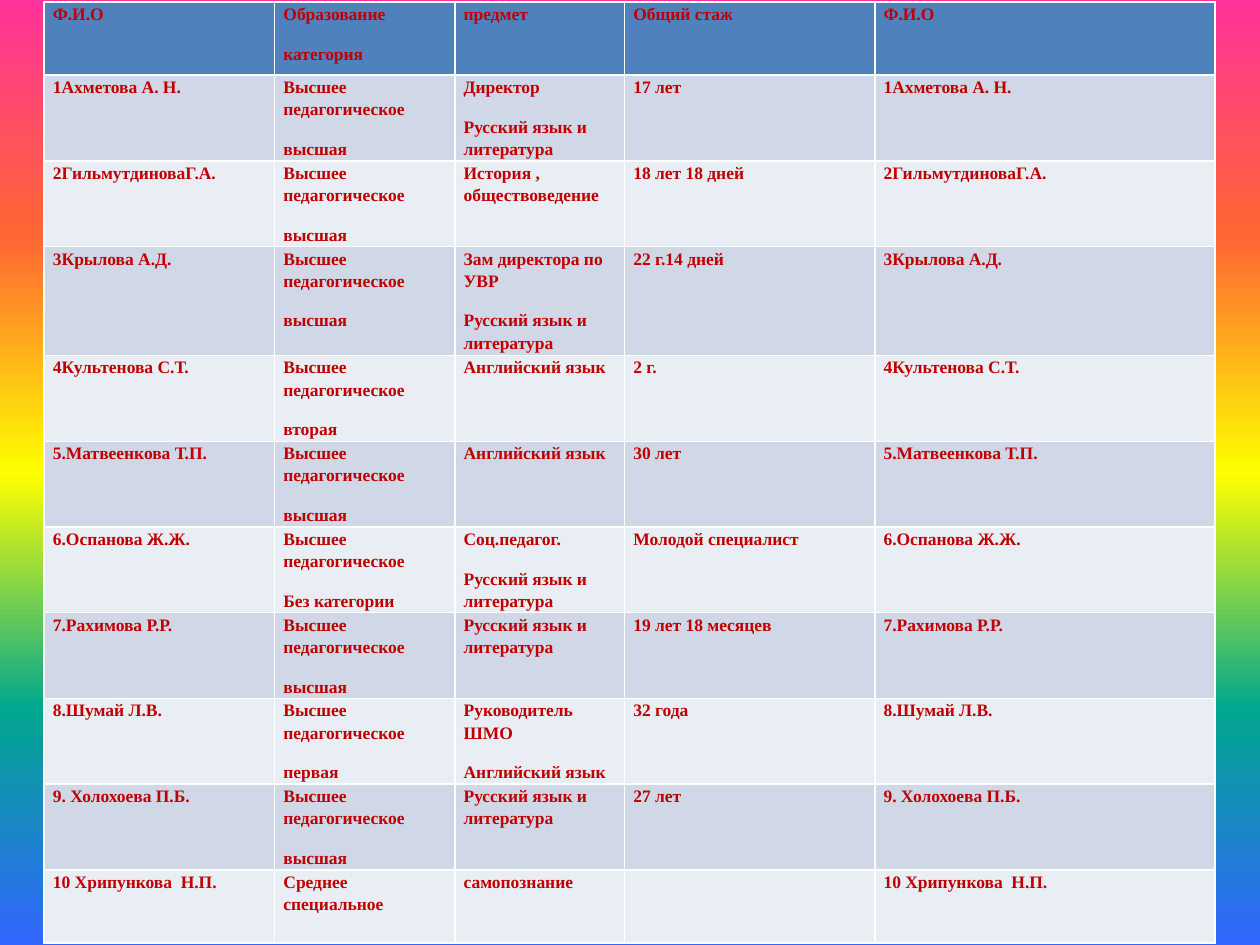
import copy

import pptx
import pptx.dml.color
import pptx.oxml.ns
import pptx.util

Pt = pptx.util.Pt
RGBColor = pptx.dml.color.RGBColor

FONT = "Times New Roman"
TEXT_RED = RGBColor(0xC0, 0x00, 0x00)
HEADER_BLUE = RGBColor(0x4F, 0x81, 0xBD)
BAND_DARK = RGBColor(0xD0, 0xD8, 0xE8)
BAND_LIGHT = RGBColor(0xE9, 0xED, 0xF4)
RAINBOW = [
    RGBColor(0xFF, 0x33, 0x99),
    RGBColor(0xFF, 0x66, 0x33),
    RGBColor(0xFF, 0xFF, 0x00),
    RGBColor(0x01, 0xA7, 0x8F),
    RGBColor(0x33, 0x66, 0xFF),
]

HIGHER = "Высшее педагогическое"
TOP_GRADE = HIGHER + "\nвысшая"
RUSSIAN = "Русский язык и литература"
ENGLISH = "Английский язык"

# Name, education and category, subject, service; the name closes each row again
STAFF = [
    ("Ф.И.О", "Образование\nкатегория", "предмет", "Общий стаж"),
    ("1Ахметова А. Н.", TOP_GRADE, "Директор\n" + RUSSIAN, "17 лет"),
    ("2ГильмутдиноваГ.А.", TOP_GRADE, "История , обществоведение", "18 лет 18 дней"),
    ("3Крылова А.Д.", TOP_GRADE, "Зам директора по УВР\n" + RUSSIAN, "22 г.14 дней"),
    ("4Культенова С.Т.", HIGHER + "\nвторая", ENGLISH, "2 г."),
    ("5.Матвеенкова Т.П.", TOP_GRADE, ENGLISH, "30 лет"),
    ("6.Оспанова Ж.Ж.", HIGHER + "\nБез категории", "Соц.педагог.\n" + RUSSIAN,
     "Молодой специалист"),
    ("7.Рахимова Р.Р.", TOP_GRADE, RUSSIAN, "19 лет 18 месяцев"),
    ("8.Шумай Л.В.", HIGHER + "\nпервая", "Руководитель ШМО\n" + ENGLISH, "32 года"),
    ("9. Холохоева П.Б.", TOP_GRADE, RUSSIAN, "27 лет"),
    ("10 Хрипункова  Н.П.", "Среднее специальное", "самопознание", ""),
]
COL_WIDTHS = [131.75, 103, 97, 143, 194.5]
ROW_HEIGHTS = [41.75, 49, 49, 62.25] + [49] * 6 + [41.75]


def paint_background(s):
    """Fill the slide with evenly spaced rainbow stops, top to bottom."""
    fill = s.background.fill
    fill.gradient()
    fill.gradient_angle = 270
    stop_list = s.element.find(".//" + pptx.oxml.ns.qn("a:gsLst"))
    while len(stop_list) < len(RAINBOW):
        stop_list.append(copy.deepcopy(stop_list[0]))
    for i, (stop, color) in enumerate(zip(fill.gradient_stops, RAINBOW)):
        stop.position = i / (len(RAINBOW) - 1)
        stop.color.rgb = color


def fill_cell(cell, text, color):
    cell.fill.solid()
    cell.fill.fore_color.rgb = color
    cell.margin_left = cell.margin_right = Pt(5)
    cell.margin_top = cell.margin_bottom = Pt(0)
    cell.text = text
    for p in cell.text_frame.paragraphs:
        p.line_spacing = 1.15
        p.space_after = Pt(10)
        p.font.name = FONT
        p.font.size = Pt(10)
        p.font.bold = True
        p.font.color.rgb = TEXT_RED


def add_staff_table(s, left, top, width, height):
    table = s.shapes.add_table(len(STAFF), len(COL_WIDTHS), Pt(left), Pt(top),
                               Pt(width), Pt(height)).table
    table.horz_banding = False
    for column, col_width in zip(table.columns, COL_WIDTHS):
        column.width = Pt(col_width)
    for i, (row, row_height, person) in enumerate(zip(table.rows, ROW_HEIGHTS, STAFF)):
        row.height = Pt(row_height)
        color = HEADER_BLUE if i == 0 else BAND_DARK if i % 2 else BAND_LIGHT
        for cell, text in zip(row.cells, person + person[:1]):
            fill_cell(cell, text, color)


def main():
    prs = pptx.Presentation()
    prs.slide_width, prs.slide_height = Pt(720), Pt(540)
    s = prs.slides.add_slide(prs.slide_layouts[6])
    paint_background(s)
    add_staff_table(s, 25.25, 1.25, sum(COL_WIDTHS), sum(ROW_HEIGHTS))
    prs.save("out.pptx")


if __name__ == "__main__":
    main()
